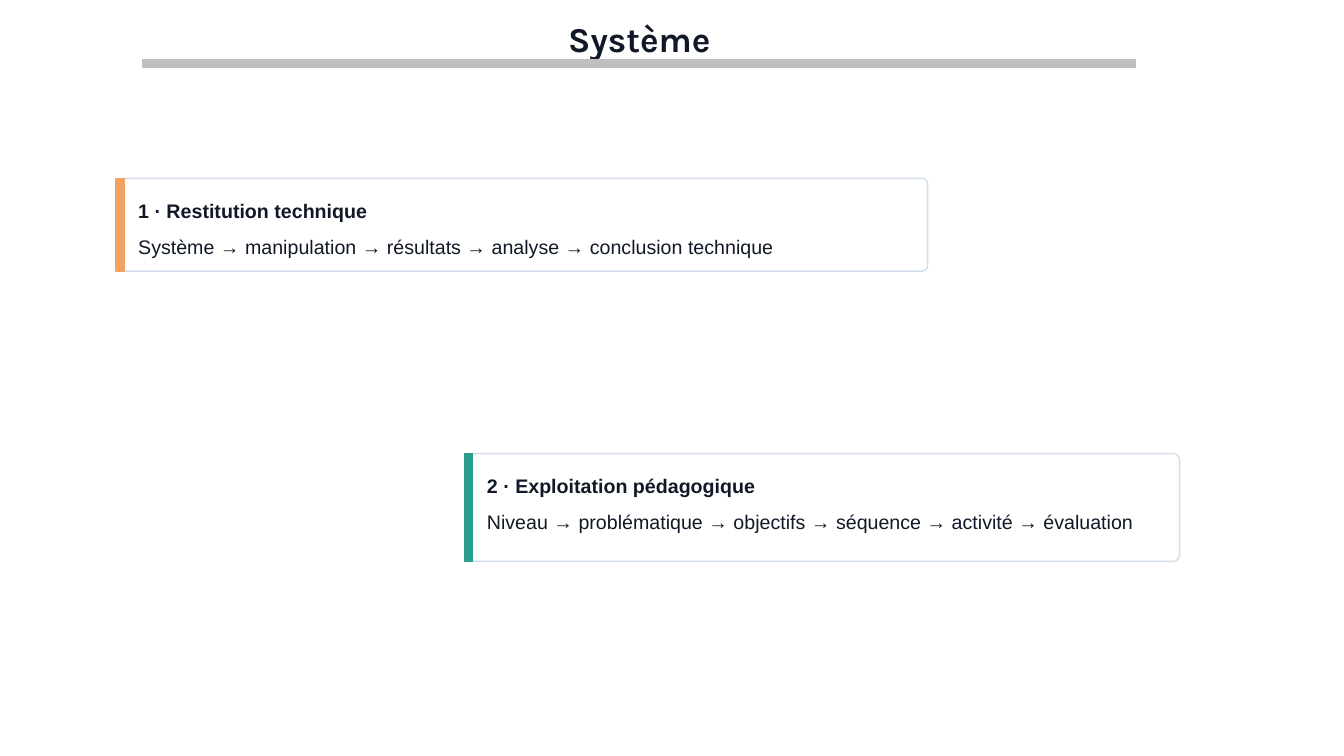
from pptx import Presentation
from pptx import util as u
from pptx.dml.color import RGBColor
from pptx.enum import shapes, text

SLIDE_WIDTH, SLIDE_HEIGHT = u.Inches(13.33), u.Inches(7.5)
INK, WHITE, CARD_BORDER, RULE_GREY = "111827", "FFFFFF", "D4DDEB", "BFBFBF"
ORANGE, GREEN = "F4A261", "2A9D8F"

# Card layout, in percent of the slide's width or height
ACCENT_WIDTH, TEXT_INDENT = 0.6, 1.65
HEADING_DROP, STEPS_DROP, LINE_HEIGHT = 1.87, 7.47, 4.67
HEADING_WIDTH = 40.14


def color(hex_code):
    return RGBColor.from_string(hex_code)


def place(left, top, width, height):
    """Turn percentages of the slide into lengths."""
    return (int(SLIDE_WIDTH * left / 100), int(SLIDE_HEIGHT * top / 100),
            int(SLIDE_WIDTH * width / 100), int(SLIDE_HEIGHT * height / 100))


def add_block(slide, preset, area, fill, border):
    block = slide.shapes.add_shape(preset, *place(*area))
    block.shadow.inherit = False
    block.fill.solid()
    block.fill.fore_color.rgb = color(fill)
    block.line.color.rgb = color(border)
    block.line.width = u.Pt(1)
    return block


def write(frame, words, font_name, size, bold=False, anchor=text.MSO_ANCHOR.MIDDLE):
    frame.word_wrap = True
    frame.auto_size = text.MSO_AUTO_SIZE.NONE
    frame.vertical_anchor = anchor
    frame.margin_left = frame.margin_right = 0
    frame.margin_top = frame.margin_bottom = 0
    frame.text = words
    line = frame.paragraphs[0]
    line.font.name, line.font.size, line.font.bold = font_name, u.Pt(size), bold
    line.font.color.rgb = color(INK)
    return line


def add_label(slide, area, words, **style):
    label = slide.shapes.add_textbox(*place(*area))
    write(label.text_frame, words, "Arial", 14, **style)


def add_header(slide, words):
    left, width = 10.65, 73.82
    title = slide.shapes.title
    title.left, title.top, title.width, title.height = place(left, 1.87, width, 6.4)
    line = write(title.text_frame, words, "Karla", 25, bold=True)
    line.alignment = text.PP_ALIGN.CENTER
    add_block(slide, shapes.MSO_SHAPE.RECTANGLE, (left, 7.87, width, 1.07),
              RULE_GREY, RULE_GREY)


def add_card(slide, area, accent, heading, steps, steps_width):
    left, top, _, height = area
    card = add_block(slide, shapes.MSO_SHAPE.ROUNDED_RECTANGLE, area, WHITE, CARD_BORDER)
    card.adjustments[0] = 0.06
    add_block(slide, shapes.MSO_SHAPE.RECTANGLE, (left, top, ACCENT_WIDTH, height),
              accent, accent)
    text_left = left + TEXT_INDENT
    add_label(slide, (text_left, top + HEADING_DROP, HEADING_WIDTH, LINE_HEIGHT),
              heading, bold=True)
    add_label(slide, (text_left, top + STEPS_DROP, steps_width, LINE_HEIGHT),
              " → ".join(steps), anchor=text.MSO_ANCHOR.TOP)


def main():
    deck = Presentation()
    deck.slide_width, deck.slide_height = SLIDE_WIDTH, SLIDE_HEIGHT
    slide = deck.slides.add_slide(deck.slide_layouts[5])

    # Title and rule
    add_header(slide, "Système")

    # The two parts of the presentation
    add_card(slide, (8.63, 23.6, 60.39, 12.27), ORANGE, "1 · Restitution technique",
             ("Système", "manipulation", "résultats", "analyse",
              "conclusion technique"), 55.89)
    add_card(slide, (34.58, 60, 53.19, 14.27), GREEN, "2 · Exploitation pédagogique",
             ("Niveau", "problématique", "objectifs", "séquence", "activité",
              "évaluation"), 55.06)

    deck.save("out.pptx")


if __name__ == "__main__":
    main()
